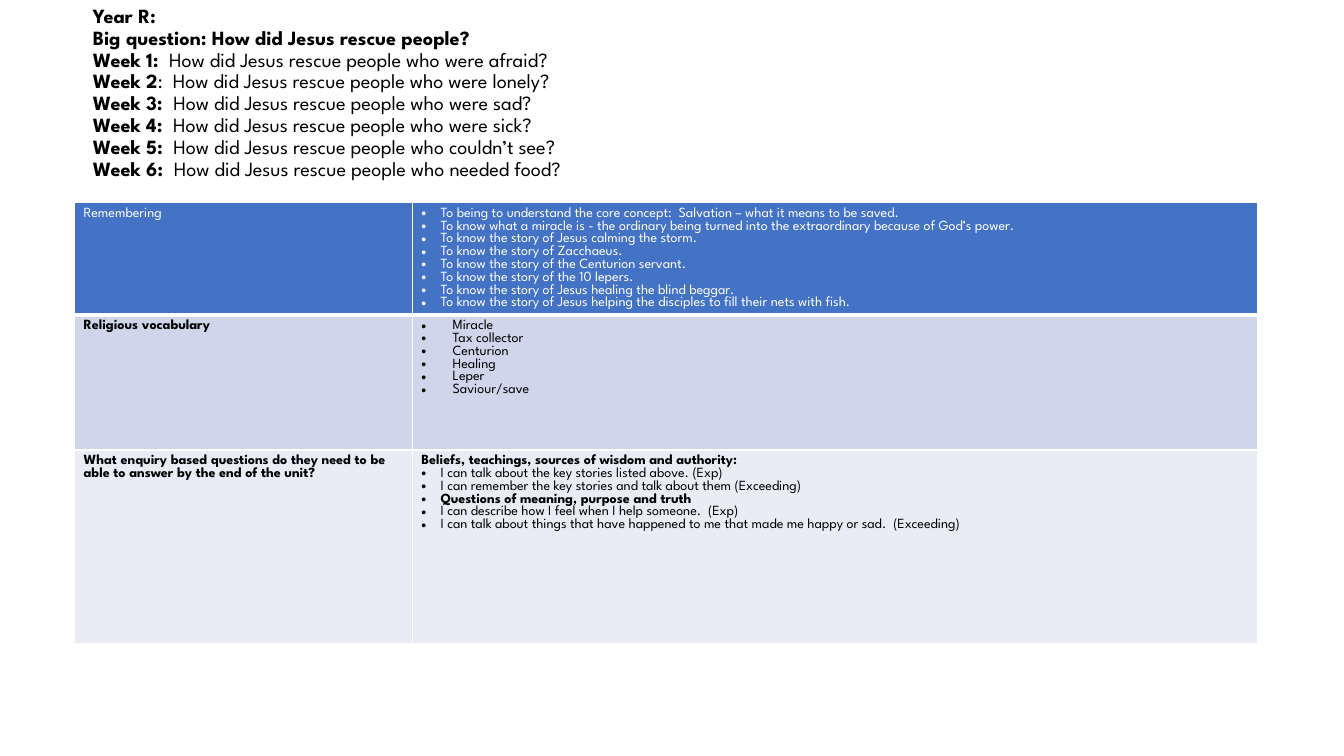
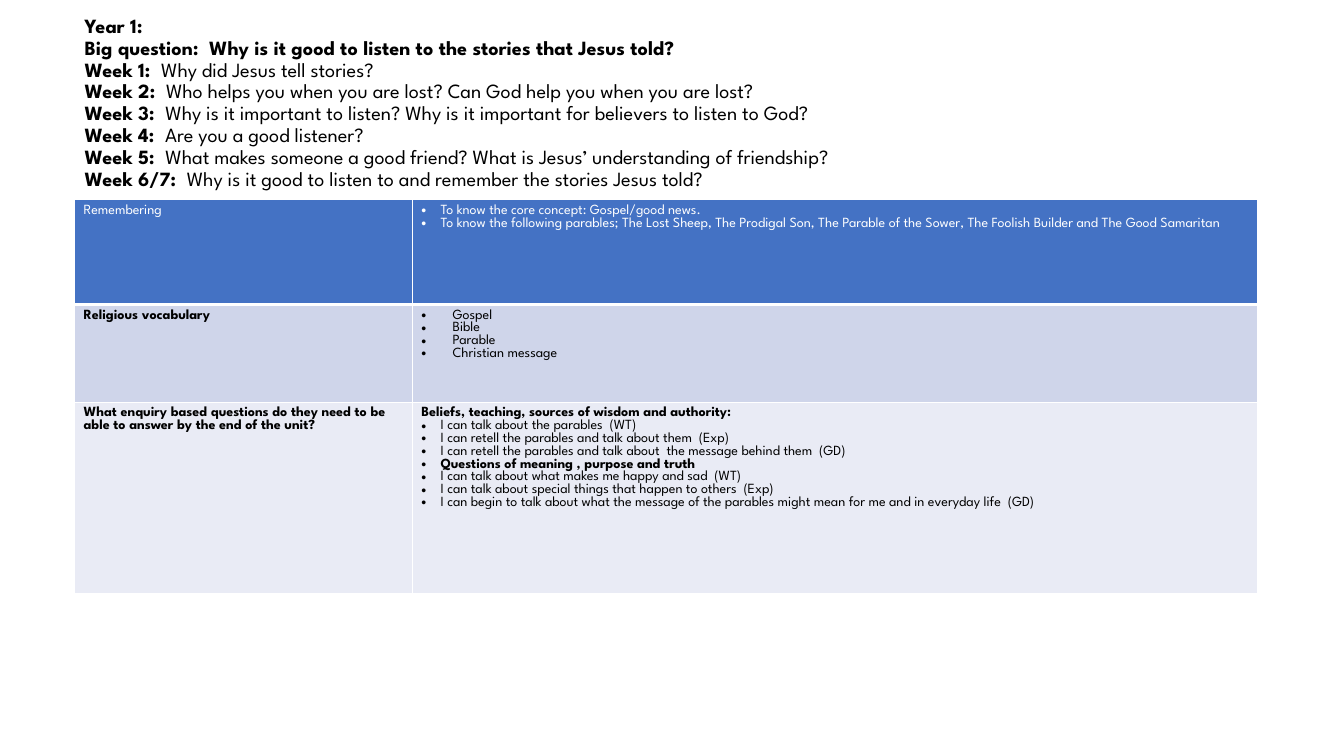
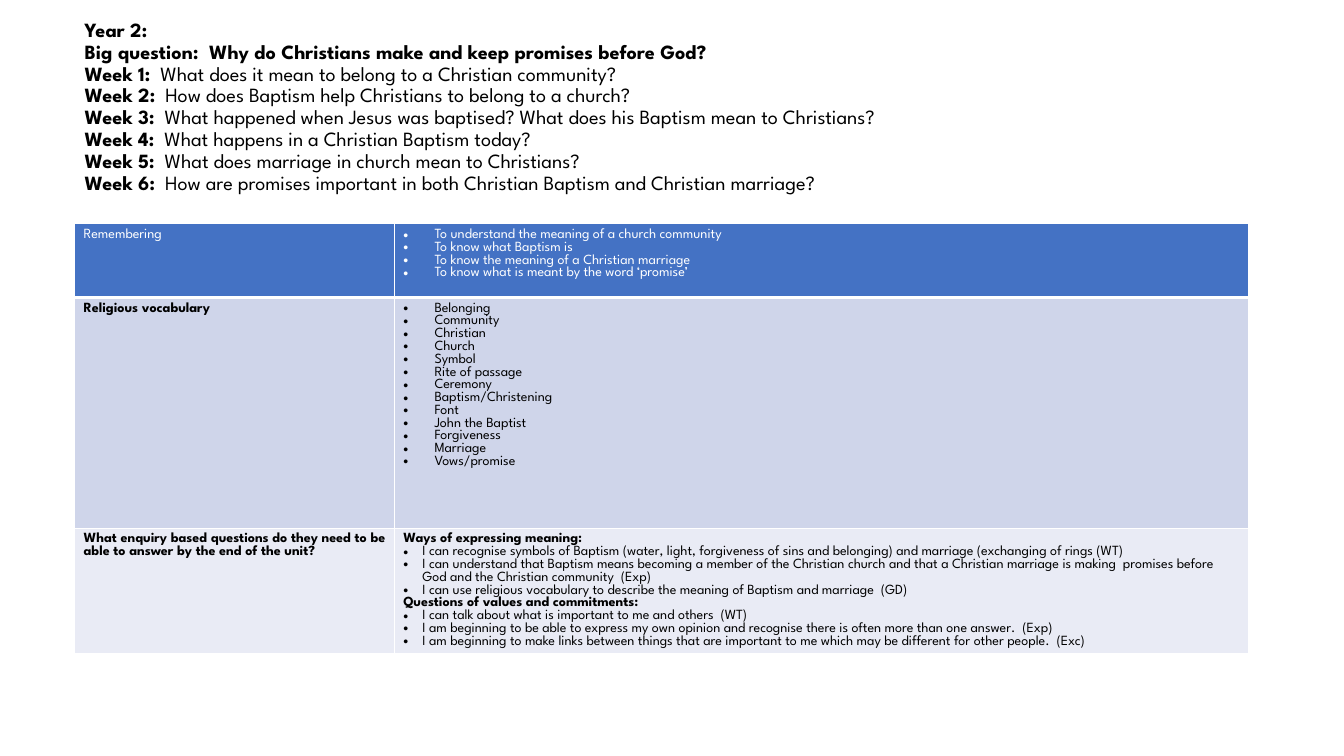
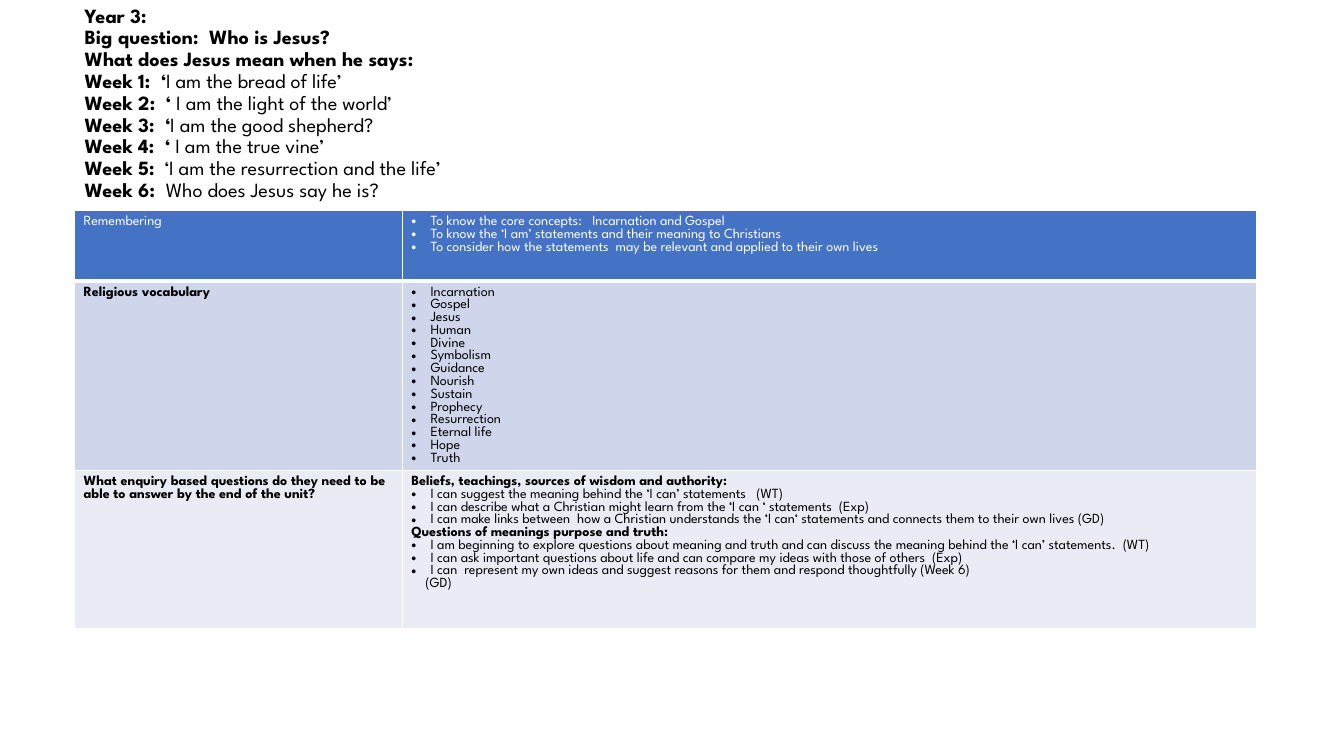
from lxml import etree
from pptx import Presentation
from pptx.dml.color import RGBColor
from pptx.enum import text
from pptx.oxml.ns import qn
from pptx.util import Inches, Pt

FONT = "League Spartan"
BLACK, WHITE = "000000", "FFFFFF"
TITLE_SIZE, TABLE_SIZE = 14.4, 10
TITLE_LINE, TITLE_PADDING = 0.216, 0.1
TABLE_LEFT, CELL_MARGIN = 0.74, 0.09
NARROW, WIDE, CONTINUED = 0.19, 0.31, 0.14

ROWS = [
    ("Remembering", "4472C4", WHITE),
    ("Religious vocabulary", "CFD5EA", BLACK),
    ("What enquiry based questions do they need to be able to answer by the end of the unit?", "E9EBF5", BLACK),
]

YEARS = [
    {
        "title_at": (0.82, 0.01, 10.11),
        "title": [
            ("Year R:", ""),
            ("Big question: How did Jesus rescue people?", ""),
            ("Week 1:  ", "How did Jesus rescue people who were afraid?"),
            ("Week 2", ":  How did Jesus rescue people who were lonely?"),
            ("Week 3:  ", "How did Jesus rescue people who were sad?"),
            ("Week 4:  ", "How did Jesus rescue people who were sick?"),
            ("Week 5:  ", "How did Jesus rescue people who couldn’t see?"),
            ("Week 6:  ", "How did Jesus rescue people who needed food?"),
        ],
        "table_top": 2.01,
        "columns": (3.35, 8.38),
        "heights": (1.11, 1.34, 1.92),
        "indents": (NARROW, WIDE, NARROW),
        "answers": [
            [
                "To being to understand the core concept:  Salvation – what it means to be saved.",
                "To know what a miracle is - the ordinary being turned into the extraordinary because of God’s power.",
                "To know the story of Jesus calming the storm.",
                "To know the story of Zacchaeus.",
                "To know the story of the Centurion servant.",
                "To know the story of the 10 lepers.",
                "To know the story of Jesus healing the blind beggar.",
                "To know the story of Jesus helping the disciples to fill their nets with fish.",
            ],
            ["Miracle", "Tax collector", "Centurion", "Healing", "Leper", "Saviour/save"],
            [
                ("heading", "Beliefs, teachings, sources of wisdom and authority:"),
                "I can talk about the key stories listed above. (Exp)",
                "I can remember the key stories and talk about them (Exceeding)",
                ("bold bullet", "Questions of meaning, purpose and truth"),
                "I can describe how I feel when I help someone.  (Exp)",
                "I can talk about things that have happened to me that made me happy or sad.  (Exceeding)",
            ],
        ],
    },
    {
        "title_at": (0.74, 0.11, 11.58),
        "title": [
            ("Year 1:", ""),
            ("Big question:  Why is it good to listen to the stories that Jesus told?", ""),
            ("Week 1:  ", "Why did Jesus tell stories?"),
            ("Week 2:  ", "Who helps you when you are lost? Can God help you when you are lost?"),
            ("Week 3:  ", "Why is it important to listen? Why is it important for believers to listen to God?"),
            ("Week 4:  ", "Are you a good listener?"),
            ("Week 5:  ", "What makes someone a good friend? What is Jesus’ understanding of friendship?"),
            ("Week 6/7:  ", "Why is it good to listen to and remember the stories Jesus told?"),
        ],
        "table_top": 1.98,
        "columns": (3.35, 8.38),
        "heights": (1.04, 0.97, 1.9),
        "indents": (NARROW, WIDE, NARROW),
        "answers": [
            [
                "To know the core concept: Gospel/good news.",
                "To know the following parables; The Lost Sheep, The Prodigal Son, The Parable of the Sower, "
                "The Foolish Builder and The Good Samaritan",
            ],
            ["Gospel", "Bible", "Parable", "Christian message"],
            [
                ("heading", "Beliefs, teaching, sources of wisdom and authority:"),
                "I can talk about the parables  (WT)",
                "I can retell the parables and talk about them  (Exp)",
                "I can retell the parables and talk about  the message behind them  (GD)",
                ("bold bullet", "Questions of meaning , purpose and truth"),
                "I can talk about what makes me happy and sad  (WT)",
                "I can talk about special things that happen to others  (Exp)",
                "I can begin to talk about what the message of the parables might mean for me "
                "and in everyday life  (GD)",
            ],
        ],
    },
    {
        "title_at": (0.74, 0.15, 10.11),
        "title": [
            ("Year 2:", ""),
            ("Big question:  Why do Christians make and keep promises before God?", ""),
            ("Week 1:", "  What does it mean to belong to a Christian community?"),
            ("Week 2:", "  How does Baptism help Christians to belong to a church?"),
            ("Week 3:", "  What happened when Jesus was baptised? What does his Baptism mean to Christians?"),
            ("Week 4:", "  What happens in a Christian Baptism today?"),
            ("Week 5:", "  What does marriage in church mean to Christians?"),
            ("Week 6:", "  How are promises important in both Christian Baptism and Christian marriage?"),
        ],
        "table_top": 2.22,
        "columns": (3.17, 8.47),
        "heights": (0.73, 2.29, 1.24),
        "indents": (WIDE, WIDE, NARROW),
        "answers": [
            [
                "To understand the meaning of a church community",
                "To know what Baptism is",
                "To know the meaning of a Christian marriage",
                "To know what is meant by the word ‘promise’",
            ],
            ["Belonging", "Community", "Christian", "Church", "Symbol", "Rite of passage", "Ceremony",
             "Baptism/Christening", "Font", "John the Baptist", "Forgiveness", "Marriage", "Vows/promise"],
            [
                ("heading", "Ways of expressing meaning:"),
                "I can recognise symbols of Baptism (water, light, forgiveness of sins and belonging) "
                "and marriage (exchanging of rings (WT)",
                "I can understand that Baptism means becoming a member of the Christian church and that "
                "a Christian marriage is making  promises before God and the Christian community  (Exp)",
                "I can use religious vocabulary to describe the meaning of Baptism and marriage  (GD)",
                ("heading", "Questions of values and commitments:"),
                "I can talk about what is important to me and others  (WT)",
                "I am beginning to be able to express my own opinion and recognise there is often "
                "more than one answer.  (Exp)",
                "I am beginning to make links between things that are important to me which may be "
                "different for other people.  (Exc)",
            ],
        ],
    },
    {
        "title_at": (0.74, 0.01, 11.13),
        "title": [
            ("Year 3:", ""),
            ("Big question:  Who is Jesus?", ""),
            ("What does Jesus mean when he says:", ""),
            ("Week 1:  ‘", "I am the bread of life’"),
            ("Week 2:  ‘ ", "I am the light of the world’"),
            ("Week 3:  ‘", "I am the good shepherd?"),
            ("Week 4:  ‘ ", "I am the true vine’"),
            ("Week 5:", "  ‘I am the resurrection and the life’"),
            ("Week 6:  ", "Who does Jesus say he is?"),
        ],
        "table_top": 2.09,
        "columns": (3.25, 8.47),
        "heights": (0.7, 1.88, 1.57),
        "indents": (NARROW, NARROW, NARROW),
        "answers": [
            [
                "To know the core concepts:   Incarnation and Gospel",
                "To know the ‘I am’ statements and their meaning to Christians",
                "To consider how the statements  may be relevant and applied to their own lives",
            ],
            ["Incarnation", "Gospel", "Jesus", "Human", "Divine", "Symbolism", "Guidance", "Nourish",
             "Sustain", "Prophecy", "Resurrection", "Eternal life", "Hope", "Truth"],
            [
                ("heading", "Beliefs, teachings, sources of wisdom and authority:"),
                "I can suggest the meaning behind the ‘I can’ statements   (WT)",
                "I can describe what a Christian might learn from the ‘I can ‘ statements  (Exp)",
                "I can make links between  how a Christian understands the ‘I can‘ statements "
                "and connects them to their own lives (GD)",
                ("heading", "Questions of meanings purpose and truth:"),
                "I am beginning to explore questions about meaning and truth and can discuss "
                "the meaning behind the ‘I can’ statements.  (WT)",
                "I can ask important questions about life and can compare my ideas with those of others  (Exp)",
                "I can  represent my own ideas and suggest reasons for them and respond thoughtfully (Week 6)",
                ("continued", "(GD)"),
            ],
        ],
    },
]


def color(value):
    return RGBColor.from_string(value)


def add_span(para, words, size, ink, bold):
    span = para.add_run()
    span.text = words
    span.font.name = FONT
    span.font.size = Pt(size)
    span.font.bold = bold
    span.font.color.rgb = color(ink)


def add_break(para):
    para.add_line_break()
    line_break = para._p.findall(qn("a:br"))[-1]
    etree.SubElement(line_break, qn("a:rPr"), sz=str(int(TITLE_SIZE * 100)))


def indent(para, left, bullet):
    properties = para._p.get_or_add_pPr()
    properties.set("marL", str(Inches(left)))
    if bullet:
        properties.set("indent", str(-Inches(left)))
        etree.SubElement(properties, qn("a:buFont"), typeface="Arial")
        etree.SubElement(properties, qn("a:buChar"), char="•")


def style_cell(cell, fill, bottom_width):
    cell.margin_left = cell.margin_right = Inches(CELL_MARGIN)
    properties = cell._tc.get_or_add_tcPr()
    for side, width in (("L", 1), ("R", 1), ("T", 1), ("B", bottom_width)):
        line = etree.SubElement(properties, qn("a:ln" + side), w=str(Pt(width)))
        solid = etree.SubElement(line, qn("a:solidFill"))
        etree.SubElement(solid, qn("a:srgbClr"), val=WHITE)
    cell.fill.solid()
    cell.fill.fore_color.rgb = color(fill)


def fill_title(box, year):
    left, top, width = year["title_at"]
    height = len(year["title"]) * TITLE_LINE + TITLE_PADDING
    box.left, box.top, box.width, box.height = (Inches(n) for n in (left, top, width, round(height, 2)))
    frame = box.text_frame
    frame.word_wrap = True
    frame.auto_size = text.MSO_AUTO_SIZE.NONE
    frame.vertical_anchor = text.MSO_ANCHOR.MIDDLE
    para = frame.paragraphs[0]
    para.alignment = text.PP_ALIGN.LEFT
    para.line_spacing = 0.9
    for number, (strong, plain) in enumerate(year["title"]):
        if number:
            add_break(para)
        add_span(para, strong, TITLE_SIZE, BLACK, True)
        if plain:
            add_span(para, plain, TITLE_SIZE, BLACK, False)


def fill_answers(cell, entries, bullet_indent, ink):
    frame = cell.text_frame
    for number, entry in enumerate(entries):
        kind, words = ("bullet", entry) if isinstance(entry, str) else entry
        para = frame.add_paragraph() if number else frame.paragraphs[0]
        if kind == "continued":
            indent(para, CONTINUED, False)
        elif kind != "heading":
            indent(para, bullet_indent, True)
        add_span(para, words, TABLE_SIZE, ink, kind in ("heading", "bold bullet"))


def add_year_table(page, year):
    columns, heights = year["columns"], year["heights"]
    table = page.shapes.add_table(
        len(ROWS), len(columns), Inches(TABLE_LEFT), Inches(year["table_top"]),
        Inches(sum(columns)), Inches(sum(heights))).table
    for column, width in zip(table.columns, columns):
        column.width = Inches(width)
    for number, (label, fill, ink) in enumerate(ROWS):
        table.rows[number].height = Inches(heights[number])
        label_cell, answer_cell = table.cell(number, 0), table.cell(number, 1)
        for cell in (label_cell, answer_cell):
            style_cell(cell, fill, 1 if number else 3)
        add_span(label_cell.text_frame.paragraphs[0], label, TABLE_SIZE, ink, number > 0)
        fill_answers(answer_cell, year["answers"][number], year["indents"][number], ink)


def main():
    deck = Presentation()
    deck.slide_width, deck.slide_height = Inches(13.33), Inches(7.5)
    for year in YEARS:
        page = deck.slides.add_slide(deck.slide_layouts[5])
        fill_title(page.shapes.title, year)
        add_year_table(page, year)
    deck.save("out.pptx")


if __name__ == "__main__":
    main()
